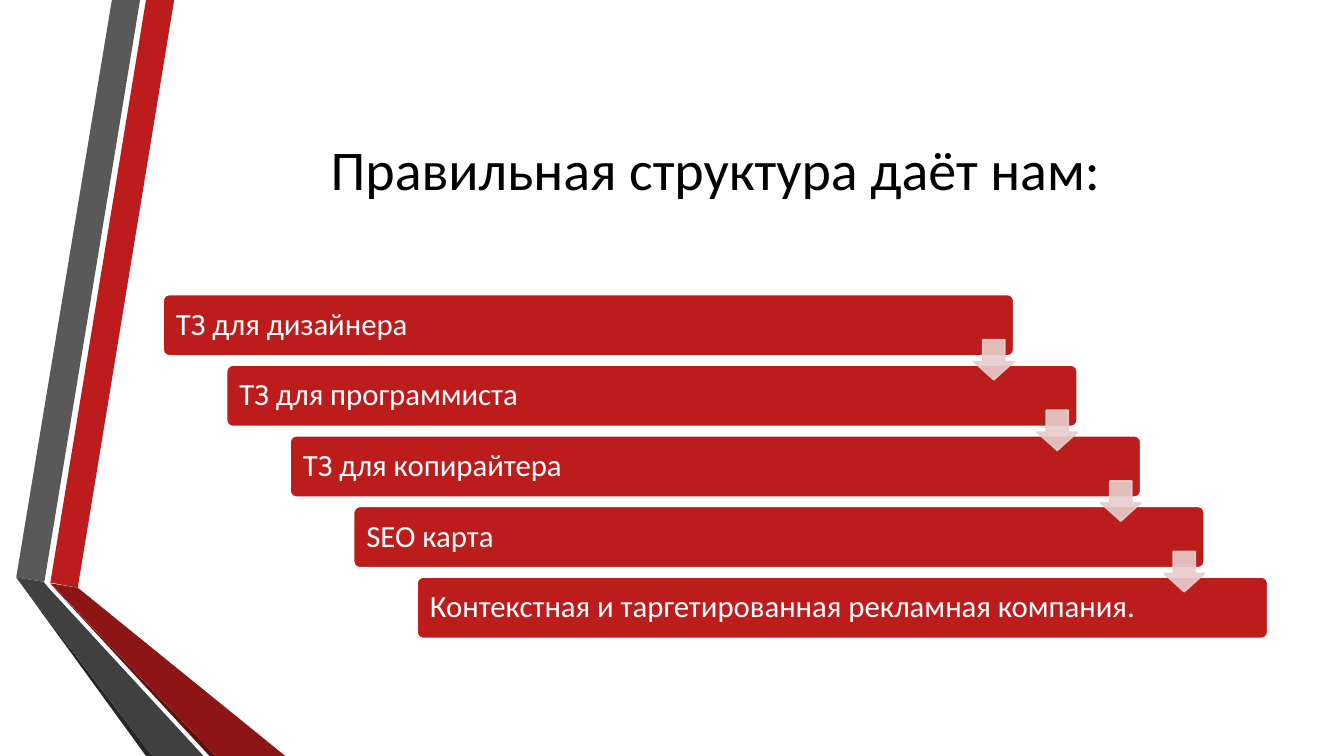
"""Build a slide listing what a proper site structure gives, as a descending staircase."""
from dataclasses import dataclass

from lxml import etree
from pptx import Presentation
from pptx import util as u
from pptx.dml.color import RGBColor
from pptx.dml.fill import FillFormat
from pptx.enum import shapes, text
from pptx.oxml.ns import qn
from pptx.shapes.autoshape import Shape
from pptx.slide import Slide
from pptx.text.text import TextFrame

FONT = "Calibri"
RED, WHITE, BLACK, PINK = "BC1C1C", "FFFFFF", "000000", "E7CDCD"
SLIDE_WIDTH, SLIDE_HEIGHT = 33.87, 19.05
STEP_X, STEP_Y = 1.6, 1.78


@dataclass(frozen=True)
class Ribbon:
    color: str
    points: tuple[tuple[float, float], ...]


@dataclass(frozen=True)
class Box:
    left: float
    top: float
    width: float
    height: float

    def stepped(self, index: int) -> "Box":
        return Box(self.left + index * STEP_X, self.top + index * STEP_Y, self.width, self.height)

    def lengths(self) -> tuple[u.Length, ...]:
        return tuple(u.Cm(value) for value in (self.left, self.top, self.width, self.height))


RIBBONS = (
    Ribbon(RED, ((1.27, 14.68), (1.96, 14.81), (4.39, 0), (3.68, 0))),
    Ribbon("595959", ((3.53, 0), (2.82, 0), (0.41, 14.55), (1.12, 14.66))),
    Ribbon("262626", ((0.41, 14.55), (3.68, SLIDE_HEIGHT), (3.84, SLIDE_HEIGHT))),
    Ribbon("5E0E0E", ((1.27, 14.71), (5.28, SLIDE_HEIGHT), (5.44, SLIDE_HEIGHT))),
    Ribbon("8D1515", ((1.27, 14.7), (5.44, SLIDE_HEIGHT), (7.19, SLIDE_HEIGHT), (1.96, 14.81))),
    Ribbon("404040", ((5.13, SLIDE_HEIGHT), (1.22, 14.81), (1.1, 14.66), (0.41, 14.55),
                      (3.84, SLIDE_HEIGHT))),
)
TITLE = "Правильная структура даёт нам:"
TITLE_BOX = Box(4.11, 1.91, 27.84, 4.88)
STEPS = (
    "ТЗ для дизайнера",
    "ТЗ для программиста",
    "ТЗ для копирайтера",
    "SEO карта",
    "Контекстная и таргетированная рекламная компания.",
)
FIRST_BAR = Box(4.11, 7.42, 21.44, 1.55)
FIRST_ARROW = Box(24.54, 8.56, 1.01, 1.01)


def rgb(color: str) -> RGBColor:
    return RGBColor.from_string(color)


def paint(fill: FillFormat, color: str) -> None:
    fill.solid()
    fill.fore_color.rgb = rgb(color)


def write(frame: TextFrame, words: str, size: int, color: str, align: text.PP_ALIGN) -> None:
    frame.word_wrap = True
    frame.vertical_anchor = text.MSO_ANCHOR.MIDDLE
    paragraph = frame.paragraphs[0]
    paragraph.alignment = align
    paragraph.line_spacing = 0.9
    run = paragraph.add_run()
    run.text = words
    run.font.name = FONT
    run.font.size = u.Pt(size)
    run.font.color.rgb = rgb(color)


def add_ribbon(slide: Slide, ribbon: Ribbon) -> None:
    start, *rest = [(u.Cm(x), u.Cm(y)) for x, y in ribbon.points]
    builder = slide.shapes.build_freeform(*start)
    builder.add_line_segments(rest, close=True)
    shape = builder.convert_to_shape()
    shape.shadow.inherit = False
    paint(shape.fill, ribbon.color)
    shape.line.fill.background()


def add_block(slide: Slide, kind: shapes.MSO_SHAPE, box: Box, fill: str, line: str,
              adjustments: tuple[float, ...]) -> Shape:
    shape = slide.shapes.add_shape(kind, *box.lengths())
    shape.shadow.inherit = False
    for index, value in enumerate(adjustments):
        shape.adjustments[index] = value
    paint(shape.fill, fill)
    paint(shape.line.fill, line)
    shape.line.width = u.Pt(1.25)
    return shape


def add_bar(slide: Slide, box: Box, words: str) -> None:
    bar = add_block(slide, shapes.MSO_SHAPE.ROUNDED_RECTANGLE, box, RED, WHITE, (0.1,))
    bar.text_frame.margin_left = u.Cm(0.28)
    write(bar.text_frame, words, 22, WHITE, text.PP_ALIGN.LEFT)


def add_arrow(slide: Slide, box: Box) -> None:
    arrow = add_block(slide, shapes.MSO_SHAPE.DOWN_ARROW, box, PINK, PINK, (0.55, 0.45))
    for color in arrow._element.spPr.iter(qn("a:srgbClr")):
        etree.SubElement(color, qn("a:alpha"), val="90000")


def main() -> None:
    presentation = Presentation()
    presentation.slide_width = u.Cm(SLIDE_WIDTH)
    presentation.slide_height = u.Cm(SLIDE_HEIGHT)
    slide = presentation.slides.add_slide(presentation.slide_layouts[6])
    paint(slide.background.fill, WHITE)
    for ribbon in RIBBONS:
        add_ribbon(slide, ribbon)
    title = slide.shapes.add_textbox(*TITLE_BOX.lengths())
    write(title.text_frame, TITLE, 40, BLACK, text.PP_ALIGN.CENTER)
    for index, words in enumerate(STEPS):
        add_bar(slide, FIRST_BAR.stepped(index), words)
    for index in range(len(STEPS) - 1):
        add_arrow(slide, FIRST_ARROW.stepped(index))
    presentation.save("out.pptx")


if __name__ == "__main__":
    main()
